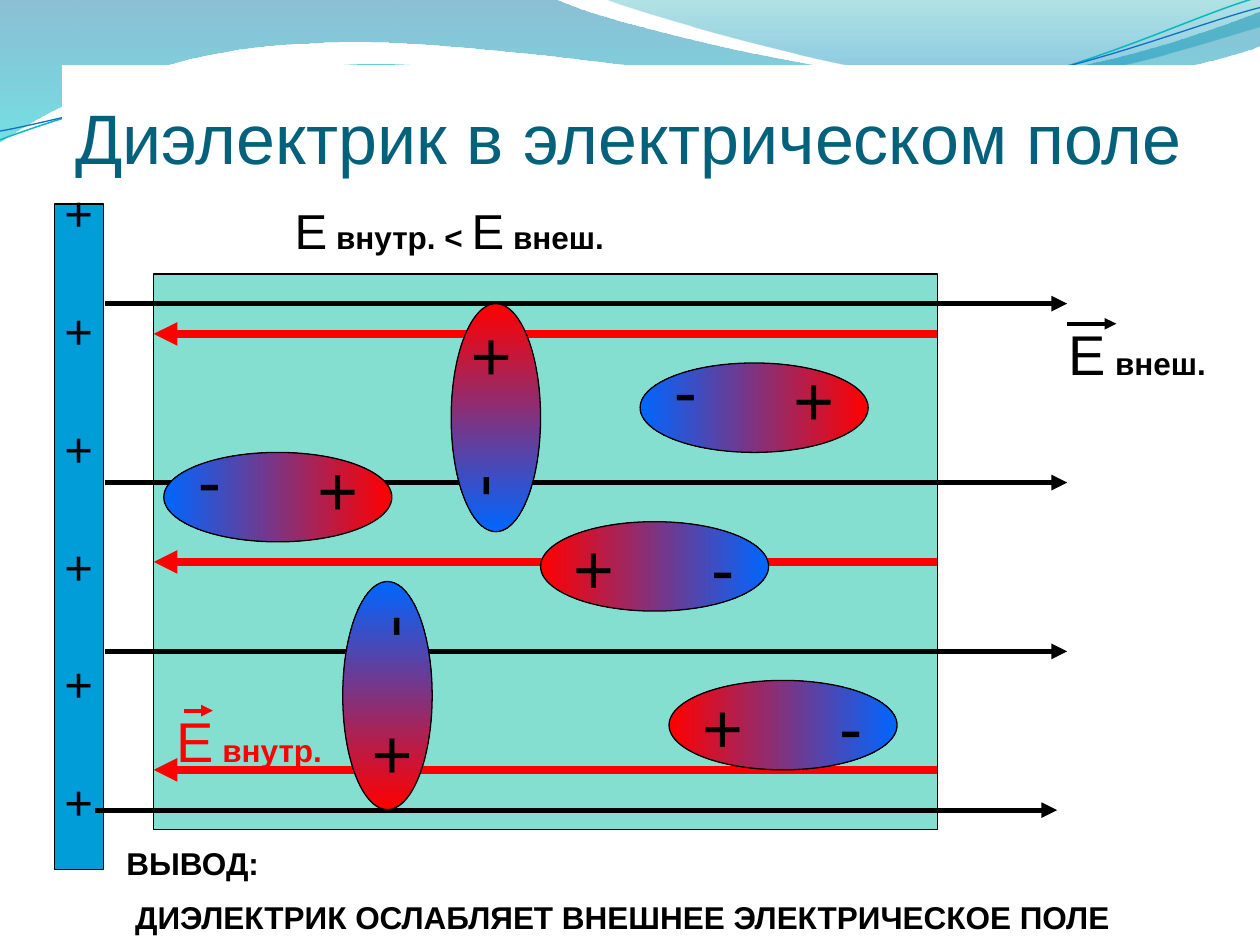
from dataclasses import dataclass
from math import cos, radians, sin

from lxml import etree
from pptx import Presentation
from pptx.dml.color import RGBColor
from pptx.enum.shapes import MSO_CONNECTOR as Connector, MSO_SHAPE as Preset
from pptx.enum.text import MSO_ANCHOR as Anchor, MSO_AUTO_SIZE as AutoSize, PP_ALIGN as Align
from pptx.oxml.ns import qn
from pptx.util import Inches, Pt

COLUMNS, ROWS = 100, 75  # square grid over the whole slide
CELL = Inches(10) // COLUMNS


@dataclass(frozen=True)
class Theme:
    font: str = "Arial"
    black: str = "000000"
    white: str = "FFFFFF"
    red: str = "FF0000"
    blue: str = "0066FF"
    title: str = "04617B"
    plate: str = "009DD9"
    dielectric: str = "85DFD0"
    wave_teal: str = "0AB8BF"
    wave_blue: str = "0F6FC6"
    large: int = 40
    symbol: int = 32
    medium: int = 28
    body: int = 18
    outline: float = 0.75


THEME = Theme()


def cells(*values):
    return [round(value * CELL) for value in values]


def color(value):
    return RGBColor.from_string(value)


def style_line(line, value, width):
    line.color.rgb = color(value)
    line.width = Pt(width)


def fill_gradient(shape, stops, angle):
    """Fill with two stops, each (position, colour, alpha in percent)."""
    shape.fill.gradient()
    shape.fill.gradient_angle = angle
    for stop, (position, value, alpha) in zip(shape.fill.gradient_stops, stops):
        stop.position = position
        stop.color.rgb = color(value)
        if alpha < 100:
            rgb = shape._element.spPr.findall(".//" + qn("a:srgbClr"))[-1 if position else 0]
            etree.SubElement(rgb, qn("a:alpha"), val=str(alpha * 1000))


def write(paragraph, text, size=THEME.body, ink=THEME.black, bold=False):
    run = paragraph.add_run()
    run.text = text
    run.font.name = THEME.font
    run.font.size = Pt(size)
    run.font.bold = bold
    run.font.color.rgb = color(ink)


def add_shape(slide, preset, box, fill=None, line=THEME.black):
    shape = slide.shapes.add_shape(preset, *cells(*box))
    shape.shadow.inherit = False
    if fill:
        shape.fill.solid()
        shape.fill.fore_color.rgb = color(fill)
    style_line(shape.line, line, THEME.outline)
    shape.text_frame.vertical_anchor = Anchor.MIDDLE
    shape.text_frame.word_wrap = True
    shape.text_frame.paragraphs[0].alignment = Align.LEFT
    return shape


def add_arrow(slide, start, end, row, ink, width):
    x1, x2, y = cells(start, end, row)
    arrow = slide.shapes.add_connector(Connector.STRAIGHT, x1, y, x2, y)
    style_line(arrow.line, ink, width)
    etree.SubElement(arrow.line._get_or_add_ln(), qn("a:tailEnd"), type="triangle")
    etree.SubElement(arrow._element.spPr, qn("a:effectLst"))


def add_label(slide, box, *lines):
    """Text box; each line is a list of (text, format) pairs."""
    frame = slide.shapes.add_textbox(*cells(*box)).text_frame
    frame.word_wrap = True
    frame.auto_size = AutoSize.SHAPE_TO_FIT_TEXT
    for index, line in enumerate(lines):
        paragraph = frame.add_paragraph() if index else frame.paragraphs[0]
        if index:
            paragraph.space_before = Pt(THEME.body / 2)
        for text, text_format in line:
            write(paragraph, text, **text_format)


def add_dipole(slide, center_x, center_y, rotation):
    width, height = 18.1, 7.1
    box = center_x - width / 2, center_y - height / 2, width, height
    dipole = add_shape(slide, Preset.OVAL, box)
    fill_gradient(dipole, [(0, THEME.red, 100), (1, THEME.blue, 100)], 0)
    dipole.rotation = rotation
    frame = dipole.text_frame
    frame.margin_left = frame.margin_right = frame.margin_top = frame.margin_bottom = 0
    paragraph = frame.paragraphs[0]
    write(paragraph, "+\t-", size=THEME.large)
    tabs = etree.SubElement(paragraph._p.get_or_add_pPr(), qn("a:tabLst"))
    etree.SubElement(tabs, qn("a:tab"), pos=str(cells(10.9)[0]), algn="l")


def add_curves(slide, start, *segments):
    """Outline of segments: one point is a straight line, three make a cubic curve."""
    builder = slide.shapes.build_freeform(*cells(*start))
    builder.add_line_segments([cells(*point) for segment in segments for point in segment],
                              close=False)
    shape = builder.convert_to_shape()
    shape.shadow.inherit = False
    outline = shape._element.spPr.find(".//" + qn("a:path"))
    lines = iter(outline.findall(qn("a:lnTo")))
    for segment in segments:
        group = [next(lines) for _ in segment]
        if len(group) == 3:
            curve = etree.Element(qn("a:cubicBezTo"))
            group[0].addprevious(curve)
            for line in group:
                curve.append(line[0])
                outline.remove(line)
    return shape


def add_wave(slide, stops, start, *segments):
    wave = add_curves(slide, start, *segments)
    outline = wave._element.spPr.find(".//" + qn("a:path"))
    etree.SubElement(outline, qn("a:close"))
    fill_gradient(wave, stops, 270)
    wave.line.fill.background()


def add_tilted_line(slide, ink, width, center, start, *segments):
    """Curve laid out level, then tilted by the shape's rotation."""
    tilt = 2.7

    def level(point):
        x, y = point[0] - center[0], point[1] - center[1]
        turn = radians(tilt)
        return (center[0] + x * cos(turn) - y * sin(turn),
                center[1] + x * sin(turn) + y * cos(turn))

    curve = add_curves(slide, level(start), *[[level(p) for p in s] for s in segments])
    curve.rotation = 360 - tilt
    curve.fill.background()
    style_line(curve.line, ink, width)


def add_waves(slide):
    add_wave(slide, [(0, "0074A1", 45), (1, "00C6CF", 55)],
             (0, 0), [(44, -0.1)],
             [(47.6, 1.7), (66.4, 6.3), (75.8, 6.3)], [(85.3, 6.3), (95.8, 2.6), (100, 0.9)],
             [(100.1, 3.6)],
             [(98.3, 4.4), (87, 7.6), (74.6, 7.5)], [(62.2, 7.5), (38.2, 2.8), (25.7, 3.4)],
             [(12.9, 3.6), (4.6, 8.3), (-0.1, 11.3)], [(0, 0)])
    add_wave(slide, [(0, "00A1A9", 30), (0.8, "008BBF", 45)],
             (47.9, -0.1), [(50.9, 1.1), (68.2, 6.2), (76.9, 6.5)],
             [(85.6, 6.9), (96.1, 3.2), (100, 2.1)], [(100, 0)], [(47.9, -0.1)])
    add_tilted_line(slide, THEME.wave_teal, 0.85, (49.9, 5.75),
                    (0, 11.1), [(4.8, 9.3), (15.8, 5.7), (27.7, 5.2)],
                    [(39.5, 4.7), (59.3, 8.9), (71.3, 8)],
                    [(83.3, 7.1), (93.8, 1.5), (99.8, -0.2)])
    add_tilted_line(slide, THEME.wave_blue, THEME.outline, (49.95, 5.9),
                    (0, 10.4), [(4.7, 9.6), (16.4, 6.1), (28.3, 5.6)],
                    [(40.3, 5.1), (59.7, 8.4), (71.7, 7.5)],
                    [(83.6, 6.7), (94.1, 2.1), (100, 0.6)])


def add_plate(slide):
    plate = add_shape(slide, Preset.RECTANGLE, (4.3, 16.2, 3.9, 52.8), THEME.plate)
    frame = plate.text_frame
    frame.margin_left = frame.margin_right = frame.margin_top = 0
    frame.margin_bottom = cells(4.8)[0]
    for index in range(6):
        paragraph = frame.add_paragraph() if index else frame.paragraphs[0]
        paragraph.alignment = Align.CENTER
        if index:
            paragraph.space_before = Pt(33.7)
        write(paragraph, "+", size=THEME.medium)


def main():
    presentation = Presentation()
    presentation.slide_width, presentation.slide_height = COLUMNS * CELL, ROWS * CELL
    slide = presentation.slides.add_slide(presentation.slide_layouts[6])

    # Background, dielectric, title and charged plate
    add_waves(slide)
    add_shape(slide, Preset.RECTANGLE, (12.2, 21.75, 62.2, 44.1), THEME.dielectric)
    title = add_shape(slide, Preset.RECTANGLE, (5, 5.2, 95, 11.2), THEME.white, THEME.white)
    write(title.text_frame.paragraphs[0], "Диэлектрик в электрическом поле",
          size=THEME.large, ink=THEME.title)
    add_plate(slide)

    # External and internal field lines
    for start, row in ((7.5, 64.3), (8.3, 51.7), (8.3, 24.1), (8.3, 38.3)):
        add_arrow(slide, start, start + 76.4, row, THEME.black, 3)
    for row in (26.5, 44.6, 61.1):
        add_arrow(slide, 74.4, 12.2, row, THEME.red, 4.5)

    # Field labels with vector marks
    bold = {"bold": True}
    red = {"ink": THEME.red}
    symbol = {"size": THEME.medium}
    add_label(slide, (83.85, 24.9, 14.2, 6.3), [("Е", {"size": THEME.symbol}), (" внеш.", bold)])
    add_label(slide, (13, 55.6, 15, 6.3),
              [("Е", {"size": THEME.symbol, **red}), (" ", red), ("внутр.", {**bold, **red})])
    add_arrow(slide, 84.7, 88.6, 25.7, THEME.black, 2.25)
    add_arrow(slide, 14.6, 16.9, 56.4, THEME.red, 2.25)

    # Dipoles
    for center_x, center_y, rotation in ((59.85, 32.35, 180), (22.05, 39.45, 180), (62.15, 57.55, 0),
                                         (51.95, 44.95, 0), (39.35, 33.15, 90), (30.75, 55.2, 270)):
        add_dipole(slide, center_x, center_y, rotation)

    # Comparison and conclusion
    add_label(slide, (22.4, 15.45, 55.1, 5.7),
              [("Е", symbol), (" ", {}), ("внутр. < ", bold),
               ("Е", symbol), (" ", {}), ("внеш.", bold)])
    add_label(slide, (9.05, 66.5, 85.8, 8.5), [("ВЫВОД:", bold)],
              [(" ДИЭЛЕКТРИК ОСЛАБЛЯЕТ ВНЕШНЕЕ ЭЛЕКТРИЧЕСКОЕ ПОЛЕ", bold)])

    presentation.save("out.pptx")


if __name__ == "__main__":
    main()
